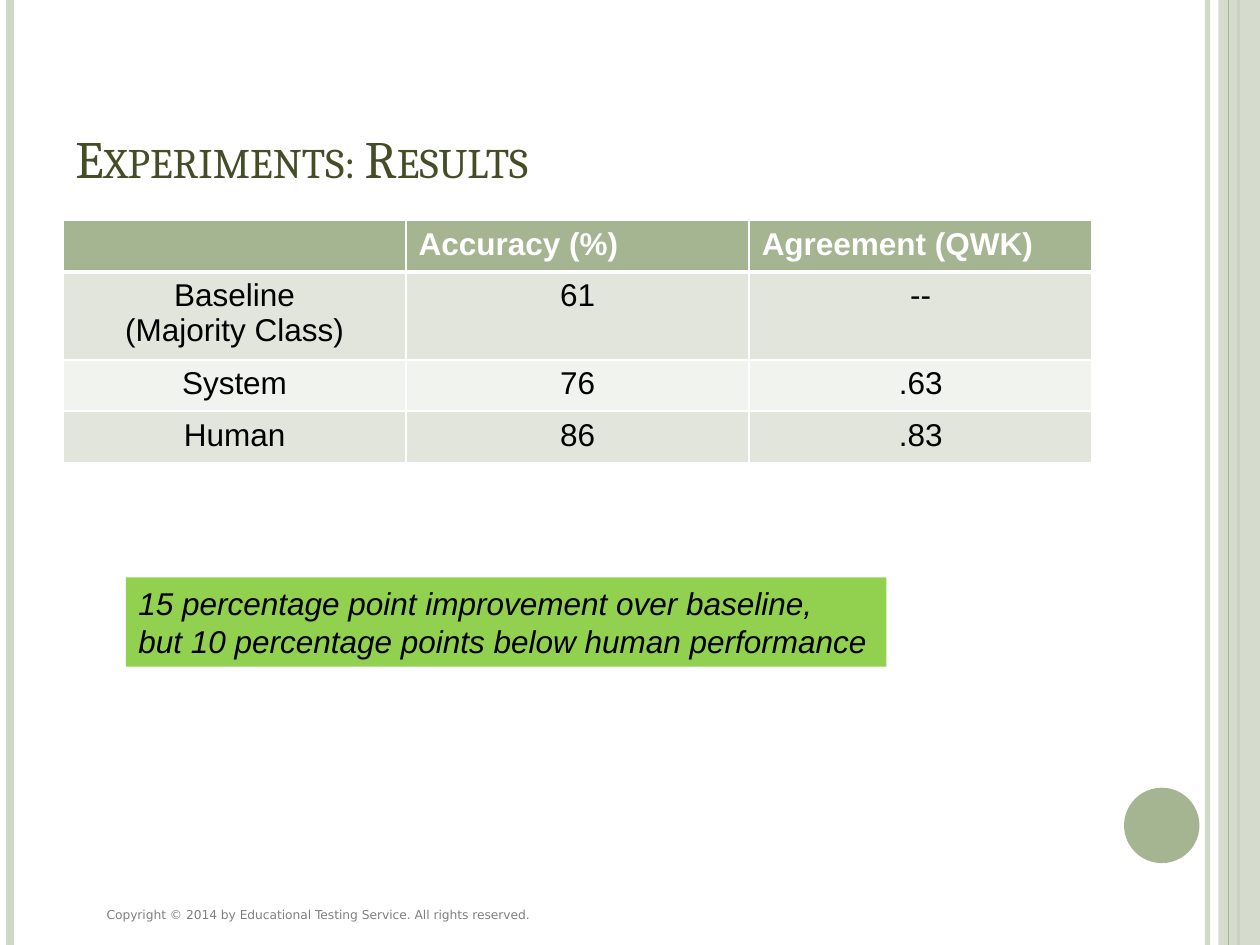
from dataclasses import dataclass

import lxml.etree
import pptx
import pptx.dml.color
import pptx.enum.shapes
import pptx.enum.text
import pptx.oxml
import pptx.oxml.ns
import pptx.util

Cm = pptx.util.Cm
Pt = pptx.util.Pt
RGBColor = pptx.dml.color.RGBColor
ShapeType = pptx.enum.shapes.MSO_SHAPE
Anchor = pptx.enum.text.MSO_ANCHOR
Align = pptx.enum.text.PP_ALIGN
qn = pptx.oxml.ns.qn

SAGE = RGBColor(0xA5, 0xB5, 0x92)
PALE_SAGE = RGBColor(0xCF, 0xD7, 0xC7)
BAND_DARK = RGBColor(0xE1, 0xE5, 0xDC)
BAND_LIGHT = RGBColor(0xF0, 0xF3, 0xEE)
OLIVE = RGBColor(0x44, 0x4D, 0x26)
LIME = RGBColor(0x92, 0xD0, 0x50)
GRAY = RGBColor(0x80, 0x80, 0x80)
BLACK = RGBColor(0, 0, 0)
WHITE = RGBColor(255, 255, 255)

SLIDE_WIDTH = Cm(25.4)
SLIDE_HEIGHT = Cm(19.05)


@dataclass(frozen=True)
class Stripe:
    x: float
    color: RGBColor
    width: float
    opacity: int = 100


@dataclass(frozen=True)
class Box:
    left: float
    top: float
    width: float
    height: float

    def lengths(self) -> tuple:
        return Cm(self.left), Cm(self.top), Cm(self.width), Cm(self.height)


@dataclass(frozen=True)
class TextStyle:
    font: str
    size: float
    color: RGBColor
    bold: bool = False
    italic: bool = False


BACK_STRIPES = [
    Stripe(24.34, PALE_SAGE, 3, 93),
    Stripe(0.21, PALE_SAGE, 4.5),
    Stripe(24.97, SAGE, 1.5),
]
FRONT_STRIPE = Stripe(24.77, SAGE, 0.75)

RESULTS = [
    ["", "Accuracy (%)", "Agreement (QWK)"],
    ["Baseline\n(Majority Class)", "61", "--"],
    ["System", "76", ".63"],
    ["Human", "86", ".83"],
]
ROW_HEIGHTS = [1.03, 1.67, 1.03, 1.03]


def set_opacity(properties, percent: int) -> None:
    color = properties.find(".//" + qn("a:srgbClr"))
    lxml.etree.SubElement(color, qn("a:alpha"), val=str(percent * 1000))


def add_stripe(slide, stripe: Stripe) -> None:
    connector = slide.shapes.add_connector(
        pptx.enum.shapes.MSO_CONNECTOR.STRAIGHT,
        Cm(stripe.x), Cm(0), Cm(stripe.x), SLIDE_HEIGHT,
    )
    connector.line.color.rgb = stripe.color
    connector.line.width = Pt(stripe.width)
    properties = connector._element.spPr
    if stripe.opacity < 100:
        set_opacity(properties, stripe.opacity)
    lxml.etree.SubElement(properties, qn("a:effectLst"))


def add_filled_shape(slide, kind, box: Box, color: RGBColor):
    shape = slide.shapes.add_shape(kind, *box.lengths())
    shape.shadow.inherit = False
    shape.fill.solid()
    shape.fill.fore_color.rgb = color
    shape.line.fill.background()
    return shape


def write_text(text_frame, text: str, style: TextStyle, align=Align.LEFT) -> None:
    text_frame.text = text
    text_frame.word_wrap = True
    for paragraph in text_frame.paragraphs:
        paragraph.alignment = align
        for run in paragraph.runs:
            run.font.name = style.font
            run.font.size = Pt(style.size)
            run.font.color.rgb = style.color
            run.font.bold = style.bold
            run.font.italic = style.italic


def add_text(slide, box: Box, text: str, style: TextStyle, anchor=Anchor.TOP):
    text_frame = slide.shapes.add_textbox(*box.lengths()).text_frame
    write_text(text_frame, text, style)
    text_frame.vertical_anchor = anchor
    return text_frame


def add_border(cell, side: str, width: float) -> None:
    line = lxml.etree.SubElement(
        cell._tc.get_or_add_tcPr(), qn(f"a:ln{side}"), w=str(Pt(width))
    )
    fill = lxml.etree.SubElement(line, qn("a:solidFill"))
    lxml.etree.SubElement(fill, qn("a:srgbClr"), val=str(WHITE))


def add_results_table(slide, box: Box) -> None:
    table = slide.shapes.add_table(
        len(RESULTS), len(RESULTS[0]), *box.lengths()
    ).table
    for row, height in zip(table.rows, ROW_HEIGHTS):
        row.height = Cm(height)
    header_style = TextStyle("Arial", 18, WHITE, bold=True)
    body_style = TextStyle("Arial", 18, BLACK)
    for row_index, values in enumerate(RESULTS):
        is_header = row_index == 0
        band = BAND_DARK if row_index % 2 else BAND_LIGHT
        for column_index, value in enumerate(values):
            cell = table.cell(row_index, column_index)
            write_text(
                cell.text_frame,
                value,
                header_style if is_header else body_style,
                Align.LEFT if is_header else Align.CENTER,
            )
            for side in "LRTB":
                thick = (is_header and side == "B") or (row_index == 1 and side == "T")
                add_border(cell, side, 3 if thick else 1)
            cell.fill.solid()
            cell.fill.fore_color.rgb = SAGE if is_header else band


def main() -> None:
    presentation = pptx.Presentation()
    presentation.slide_width = SLIDE_WIDTH
    presentation.slide_height = SLIDE_HEIGHT
    slide = presentation.slides.add_slide(presentation.slide_layouts[6])

    for stripe in BACK_STRIPES:
        add_stripe(slide, stripe)
    side_band = add_filled_shape(
        slide, ShapeType.RECTANGLE, Box(24.56, 0, 0.84, 19.05), PALE_SAGE
    )
    set_opacity(side_band._element.spPr, 87)
    add_stripe(slide, FRONT_STRIPE)
    add_filled_shape(slide, ShapeType.OVAL, Box(22.66, 15.88, 1.52, 1.52), SAGE)

    add_text(
        slide,
        Box(1.9, 18.16, 15.88, 0.56),
        "Copyright © 2014 by Educational Testing Service. All rights reserved.",
        TextStyle("DejaVu Sans", 7, GRAY),
    )
    title = add_text(
        slide,
        Box(1.27, 0.76, 20.75, 3.18),
        "Experiments: Results",
        TextStyle("Cambria", 30, OLIVE),
        Anchor.BOTTOM,
    )
    title.paragraphs[0].runs[0].font._element.set("cap", "small")

    add_results_table(slide, Box(1.27, 4.45, 20.75, 4.76))

    callout = add_filled_shape(
        slide, ShapeType.RECTANGLE, Box(2.54, 11.64, 15.33, 1.8), LIME
    )
    write_text(
        callout.text_frame,
        "15 percentage point improvement over baseline,\n"
        "but 10 percentage points below human performance",
        TextStyle("Arial", 18, BLACK, italic=True),
    )

    presentation.save("out.pptx")


if __name__ == "__main__":
    main()
